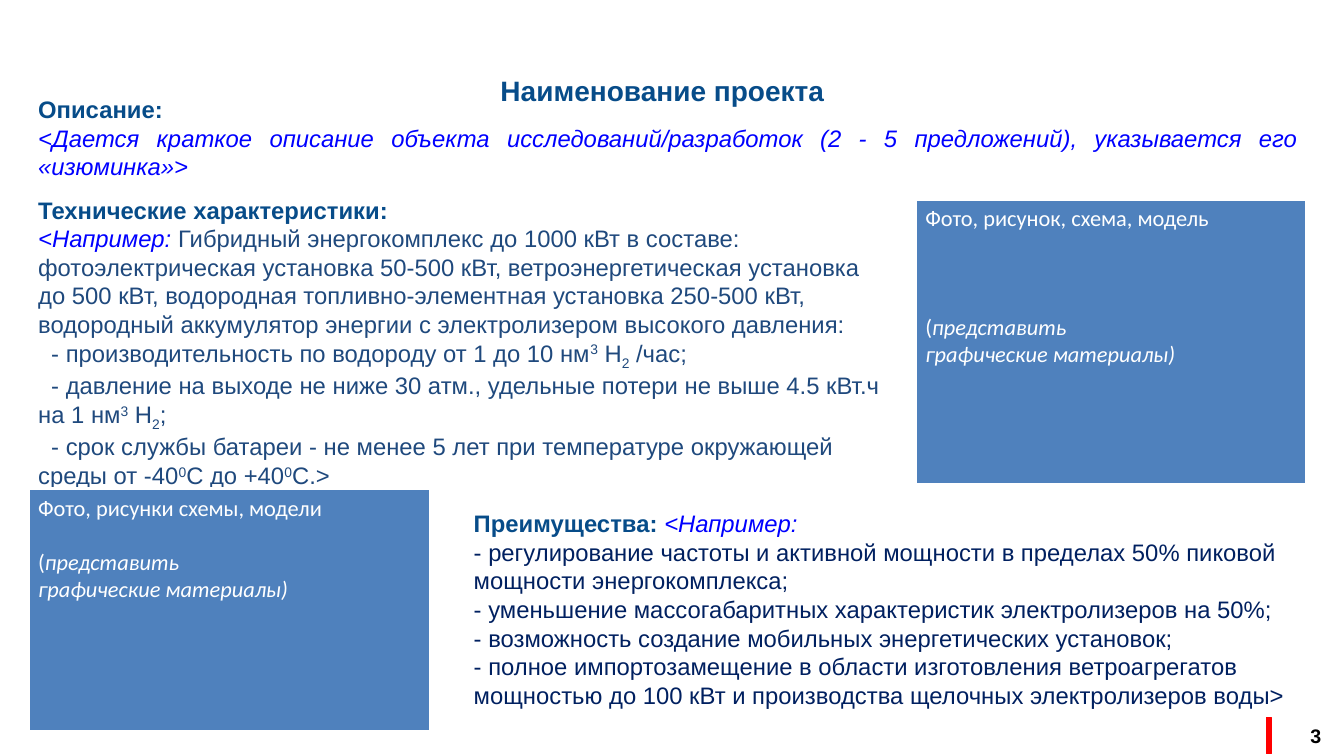
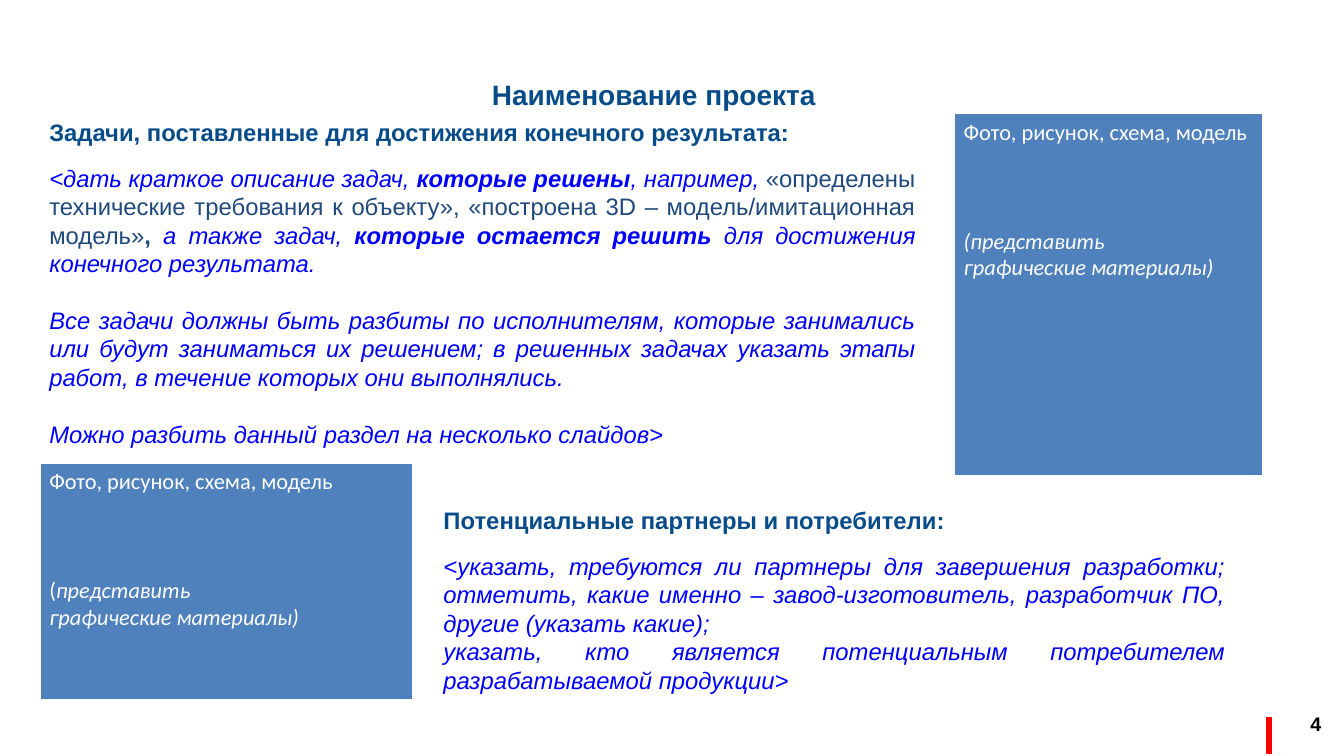
from pptx import Presentation
from pptx.dml.color import RGBColor
from pptx.enum.shapes import MSO_SHAPE as Shape
from pptx.enum.text import MSO_ANCHOR as Anchor, MSO_AUTO_SIZE as Fit, PP_ALIGN as Align
from pptx.util import Pt

PX = 9144
NAVY = RGBColor(0x07, 0x4C, 0x89)
BLUE = RGBColor(0x00, 0x00, 0xFF)
SLATE = RGBColor(0x1F, 0x49, 0x7D)
DARK = RGBColor(0x00, 0x20, 0x60)
STEEL = RGBColor(0x4F, 0x81, 0xBD)
RED = RGBColor(0xFF, 0x00, 0x00)
WHITE = RGBColor(0xFF, 0xFF, 0xFF)
BLACK = RGBColor(0x00, 0x00, 0x00)


def font(color, size=17, name="Arial", bold=False, italic=False):
    return dict(name=name, size=Pt(size), bold=bold, italic=italic, color=color)


STYLES = {
    "title": font(NAVY, 20, bold=True),
    "head": font(NAVY, bold=True),
    "note": font(BLUE, italic=True),
    "key": font(BLUE, bold=True, italic=True),
    "body": font(SLATE),
    "bold": font(SLATE, bold=True),
    "up": font(SLATE),
    "down": font(SLATE),
    "dark": font(DARK),
    "page": font(BLACK, 14, bold=True),
    "photo": font(WHITE, 16, "Calibri"),
    "hint": font(WHITE, 16, "Calibri", italic=True),
}
SHIFTS = {"up": "30000", "down": "-25000"}
LINE = 19.5


def para(*runs, indent=0, **form):
    return runs, indent, form


def item(*runs):
    return para(*runs, indent=13)


def just(*runs, **form):
    return para(*runs, alignment=Align.JUSTIFY, **form)


class Deck:
    def __init__(self):
        self.prs = Presentation()
        self.prs.slide_width = 1333 * PX
        self.prs.slide_height = 750 * PX

    def start(self, box, title):
        layout = self.prs.slide_layouts[5]
        self.slide = self.prs.slides.add_slide(layout)
        self.bar()
        head = self.slide.shapes.title
        head.left, head.top, head.width, head.height = self.scale(box)
        self.fill(head, [para((title, "title"), alignment=Align.CENTER)])

    def scale(self, box):
        return [n * PX for n in box]

    def fill(self, shape, paras, anchor=Anchor.TOP):
        frame = shape.text_frame
        form = dict(word_wrap=True, auto_size=Fit.NONE, vertical_anchor=anchor)
        for key, value in form.items():
            setattr(frame, key, value)
        for i, (runs, indent, form) in enumerate(paras):
            p = frame.add_paragraph() if i else frame.paragraphs[0]
            if indent:
                p._p.get_or_add_pPr().set("indent", str(indent * PX))
            form = {"alignment": Align.LEFT, "space_before": Pt(0), **form}
            for key, value in form.items():
                setattr(p, key, value)
            for text, style in runs:
                self.run(p, text, style)

    def run(self, p, text, style):
        run = p.add_run()
        run.text = text
        for key, value in STYLES[style].items():
            if key == "color":
                run.font.color.rgb = value
            else:
                setattr(run.font, key, value)
        if style in SHIFTS:
            run._r.get_or_add_rPr().set("baseline", SHIFTS[style])

    def text(self, box, *paras, anchor=Anchor.TOP):
        shape = self.slide.shapes.add_textbox(*self.scale(box))
        self.fill(shape, paras, anchor)

    def rect(self, box, color, edge, width):
        shape = self.slide.shapes.add_shape(Shape.RECTANGLE, *self.scale(box))
        shape.shadow.inherit = False
        shape.fill.solid()
        shape.fill.fore_color.rgb = color
        shape.line.color.rgb = edge
        shape.line.width = Pt(width)
        return shape

    def bar(self):
        self.rect((1256, 712, 5, 36), RED, RED, 0.75)

    def photo(self, box, label="Фото, рисунок, схема, модель", gap=3, mark="photo"):
        shape = self.rect(box, STEEL, WHITE, 2)
        self.fill(shape, [
            para((label, "photo")),
            para(("(", mark), ("представить", "hint"), space_before=Pt(gap * LINE)),
            para(("графические материалы)", "hint")),
        ])

    def page(self, box, number):
        self.text(box, para((number, "page"), alignment=Align.CENTER),
                  anchor=Anchor.MIDDLE)


def about(deck):
    deck.start((28, 68, 1258, 44), "Наименование проекта")
    deck.text(
        (28, 189, 859, 296),
        para(("Технические характеристики:", "head")),
        para(("<Например: ", "note"),
             ("Гибридный энергокомплекс до 1000 кВт в составе:", "body")),
        para(("фотоэлектрическая установка 50-500 кВт, ветроэнергетическая установка "
              "до 500 кВт, водородная топливно-элементная установка 250-500 кВт, "
              "водородный аккумулятор энергии с электролизером высокого давления:",
              "body")),
        item(("- производительность по водороду от 1 до 10 нм", "body"), ("3", "up"),
             (" Н", "body"), ("2", "down"), (" /час;", "body")),
        item(("- давление на выходе не ниже 30 атм., удельные потери не выше "
              "4.5 кВт.ч на 1 нм", "body"), ("3", "up"),
             (" H", "body"), ("2", "down"), (";", "body")),
        item(("- срок службы батареи - не менее 5 лет при температуре окружающей "
              "среды от -40", "body"), ("0", "up"),
             ("С до +40", "body"), ("0", "up"), ("С.>", "body")),
    )
    deck.text(
        (28, 89, 1269, 96),
        para(("Описание:", "head")),
        just(("<Дается краткое описание объекта исследований/разработок "
              "(2 - 5 предложений), указывается его «изюминка»>", "note")),
    )
    gains = (
        "- регулирование частоты и активной мощности в пределах 50% пиковой "
        "мощности энергокомплекса;",
        "- уменьшение массогабаритных характеристик электролизеров на 50%;",
        "- возможность создание мобильных энергетических установок;",
        "- полное импортозамещение в области изготовления ветроагрегатов "
        "мощностью до 100 кВт и производства щелочных электролизеров воды>",
    )
    deck.text(
        (460, 500, 831, 210),
        para(("Преимущества: ", "head"), ("<Например:", "note")),
        *[para((gain, "dark")) for gain in gains],
    )
    deck.page((1277, 710, 56, 40), "3")
    deck.photo((908, 198, 388, 283))
    deck.photo((28, 485, 399, 241), "Фото, рисунки схемы, модели", gap=1)


def tasks(deck):
    deck.start((24, 72, 1249, 44), "Наименование проекта")
    deck.text(
        (39, 112, 879, 342),
        para(("Задачи, поставленные для достижения конечного результата:", "head"),
             space_after=Pt(12)),
        just(("<дать краткое описание задач, ", "note"), ("которые решены", "key"),
             (", например, ", "note"), ("«определены", "body")),
        just(("технические требования к объекту», «построена 3D – "
              "модель/имитационная модель»", "body"), (", ", "bold"),
             ("а также задач, ", "note"), ("которые остается решить", "key"),
             (" для достижения конечного результата.", "note")),
        just(("Все задачи должны быть разбиты по исполнителям, которые занимались "
              "или будут заниматься их решением; в решенных задачах указать этапы "
              "работ, в течение которых они выполнялись.", "note"),
             space_before=Pt(20)),
        just(("Можно разбить данный раздел на несколько слайдов>", "note"),
             space_before=Pt(20)),
    )
    deck.text(
        (430, 497, 795, 199),
        para(("Потенциальные партнеры и потребители:", "head"), space_after=Pt(12)),
        just(("<указать, требуются ли партнеры для завершения разработки; "
              "отметить, какие именно – завод-изготовитель, разработчик ПО, "
              "другие (указать какие);", "note")),
        just(("указать, кто является потенциальным потребителем "
              "разрабатываемой продукции>", "note")),
    )
    deck.page((1277, 702, 56, 32), "4")
    deck.photo((39, 459, 371, 236))
    deck.photo((946, 112, 307, 361), mark="hint")


def main():
    deck = Deck()
    about(deck)
    tasks(deck)
    deck.prs.save("out.pptx")


if __name__ == "__main__":
    main()
